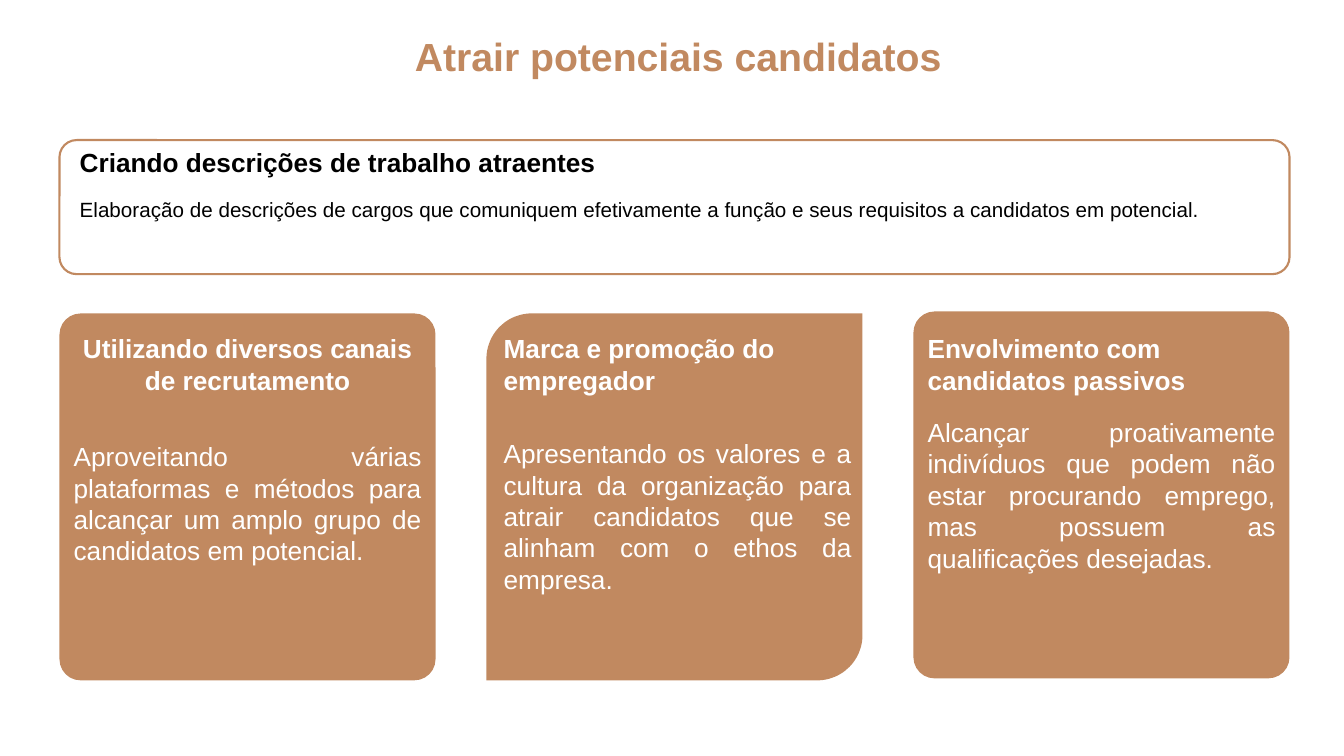
"""Build the slide on attracting potential candidates."""
from dataclasses import dataclass

from pptx import Presentation
from pptx.dml.color import RGBColor
from pptx.enum.shapes import MSO_SHAPE
from pptx.enum.text import MSO_AUTO_SIZE, PP_ALIGN
from pptx.util import Inches, Pt

LEFT, CENTER, JUSTIFY = PP_ALIGN.LEFT, PP_ALIGN.CENTER, PP_ALIGN.JUSTIFY
ROUNDED = MSO_SHAPE.ROUNDED_RECTANGLE
DIAGONAL = MSO_SHAPE.ROUND_2_DIAG_RECTANGLE
GROW = MSO_AUTO_SIZE.SHAPE_TO_FIT_TEXT


@dataclass(frozen=True)
class Theme:
    font: str = "Arial"
    accent: RGBColor = RGBColor(0xC1, 0x89, 0x60)
    dark: RGBColor = RGBColor(0, 0, 0)
    light: RGBColor = RGBColor(255, 255, 255)
    title: float = 28
    body: float = 18.7
    small: float = 14.7


THEME = Theme()

TITLE = "Atrair potenciais candidatos"
INTRO_HEADING = "Criando descrições de trabalho atraentes"
INTRO_TEXT = (
    "Elaboração de descrições de cargos que comuniquem efetivamente a função "
    "e seus requisitos a candidatos em potencial."
)
CARDS = [
    {
        "heading": "Utilizando diversos canais de recrutamento",
        "text": "Aproveitando várias plataformas e métodos para alcançar um amplo "
                "grupo de candidatos em potencial.",
        "outline": ROUNDED, "radius": 0.21, "top": 3.11, "align": CENTER,
        "text_shift": 0, "text_top": 4.23, "text_height": 1.54,
    },
    {
        "heading": "Marca e promoção do empregador",
        "text": "Apresentando os valores e a cultura da organização para atrair "
                "candidatos que se alinham com o ethos da empresa.",
        "outline": DIAGONAL, "radius": 0.45, "top": 3.11, "align": LEFT,
        "text_shift": 0.03, "text_top": 4.2, "text_height": 1.85,
    },
    {
        "heading": "Envolvimento com candidatos passivos",
        "text": "Alcançar proativamente indivíduos que podem não estar procurando "
                "emprego, mas possuem as qualificações desejadas.",
        "outline": ROUNDED, "radius": 0.21, "top": 3.09, "align": LEFT,
        "text_shift": 0, "text_top": 3.99, "text_height": 1.85,
    },
]

MARGIN, CONTENT_WIDTH = 0.59, 12.2
CARD_WIDTH, CARD_HEIGHT = 3.73, 3.64
CARD_STEP = (CONTENT_WIDTH - CARD_WIDTH) / (len(CARDS) - 1)
INTRO_TOP, INTRO_HEIGHT = 1.39, 1.33
WIDE_LEFT, WIDE_WIDTH = 0.65, 12.15


def add_text(slide, text, left, top, width, height, *, size=THEME.body,
             color=THEME.dark, bold=False, align=LEFT, spacing=1.0):
    box = slide.shapes.add_textbox(Inches(left), Inches(top), Inches(width), Inches(height))
    frame = box.text_frame
    frame.word_wrap = True
    frame.auto_size = GROW
    frame.margin_left = frame.margin_right = Inches(0.14)
    frame.margin_top = frame.margin_bottom = Inches(0.14)
    paragraph = frame.paragraphs[0]
    paragraph.alignment = align
    paragraph.line_spacing = spacing
    paragraph.space_before = Pt(5)
    run = paragraph.add_run()
    run.text = text
    run.font.name = THEME.font
    run.font.size = Pt(size)
    run.font.bold = bold
    run.font.color.rgb = color


def add_panel(slide, outline, left, top, width, height, radius, filled=True):
    shape = slide.shapes.add_shape(
        outline, Inches(left), Inches(top), Inches(width), Inches(height))
    shape.shadow.inherit = False
    shape.adjustments[0] = radius / height
    if filled:
        shape.fill.solid()
        shape.fill.fore_color.rgb = THEME.accent
        shape.line.fill.background()
    else:
        shape.fill.background()
        shape.line.color.rgb = THEME.accent
        shape.line.width = Pt(1.5)


def add_card(slide, card, left):
    add_panel(slide, card["outline"], left, card["top"], CARD_WIDTH, CARD_HEIGHT,
              card["radius"])
    text_left = left + card["text_shift"]
    add_text(slide, card["heading"], text_left, 3.16, CARD_WIDTH, 0.91,
             color=THEME.light, bold=True, align=card["align"])
    add_text(slide, card["text"], text_left, card["text_top"], CARD_WIDTH,
             card["text_height"], color=THEME.light, align=JUSTIFY)


def main():
    presentation = Presentation()
    presentation.slide_width = Inches(13.33)
    presentation.slide_height = Inches(7.5)
    slide = presentation.slides.add_slide(presentation.slide_layouts[6])

    add_text(slide, TITLE, WIDE_LEFT, 0.27, WIDE_WIDTH, 0.66, size=THEME.title,
             color=THEME.accent, bold=True, align=CENTER, spacing=0.8)
    add_panel(slide, ROUNDED, MARGIN, INTRO_TOP, CONTENT_WIDTH, INTRO_HEIGHT, 0.17,
              filled=False)
    add_text(slide, INTRO_HEADING, WIDE_LEFT, INTRO_TOP, WIDE_WIDTH, 0.54,
             bold=True, spacing=0.8)
    add_text(slide, INTRO_TEXT, WIDE_LEFT, 1.83, WIDE_WIDTH, 0.53,
             size=THEME.small, align=JUSTIFY)
    for index, card in enumerate(CARDS):
        add_card(slide, card, MARGIN + index * CARD_STEP)

    presentation.save("out.pptx")


if __name__ == "__main__":
    main()
